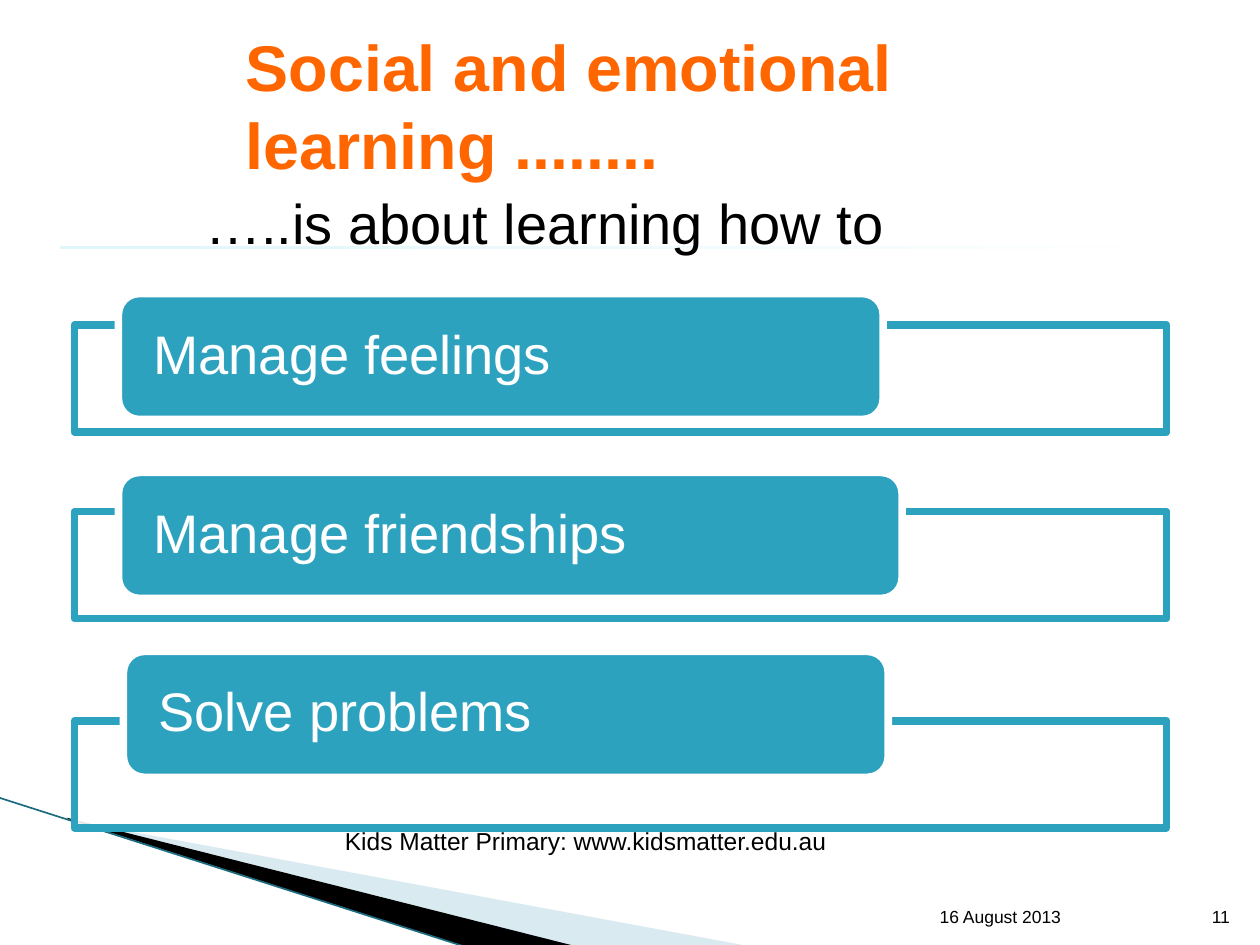
from lxml.etree import SubElement
from pptx import Presentation
from pptx.dml.color import RGBColor
from pptx.enum.shapes import MSO_CONNECTOR, MSO_SHAPE
from pptx.enum.text import MSO_ANCHOR, PP_ALIGN
from pptx.oxml.ns import qn
from pptx.util import Inches, Pt

WHITE = RGBColor(0xFF, 0xFF, 0xFF)
BLACK = RGBColor(0, 0, 0)
ORANGE = RGBColor(0xFF, 0x66, 0x00)
TEAL = RGBColor(0x2D, 0xA2, 0xBF)
MIST = RGBColor(0xA0, 0xCB, 0xDC)
EDGE = RGBColor(0x1B, 0x6C, 0x80)
PALE = RGBColor(0xDE, 0xF5, 0xFA)

COLS, ROWS = 100, 75
FONT = "Arial"
BORDER = 4.33


class SlideBuilder:
    def __init__(self, prs):
        self.s = prs.slides.add_slide(prs.slide_layouts[5])
        self.col = prs.slide_width / COLS
        self.row = prs.slide_height / ROWS

    def grid(self, x, y):
        return round(x * self.col), round(y * self.row)

    def box(self, x, y, w, h):
        return *self.grid(x, y), *self.grid(w, h)

    def paint(self, sp, fill, line=None, alpha=None):
        sp.shadow.inherit = False
        sp.fill.solid()
        sp.fill.fore_color.rgb = fill
        if alpha:
            clr = sp._element.spPr.find(qn("a:solidFill"))[0]
            SubElement(clr, qn("a:alpha"), val=str(alpha * 1000))
        if line is None:
            sp.line.fill.background()
        else:
            sp.line.color.rgb = line
            sp.line.width = Pt(BORDER)

    def set_text(self, sp, text, size, color, align=PP_ALIGN.LEFT,
                 anchor=MSO_ANCHOR.TOP, spacing=None, bold=False):
        tf = sp.text_frame
        tf.word_wrap = True
        tf.vertical_anchor = anchor
        p = tf.paragraphs[0]
        p.text = text
        p.alignment = align
        p.line_spacing = spacing
        p.font.name, p.font.size, p.font.bold = FONT, Pt(size), bold
        p.font.color.rgb = color

    def title(self, area, text):
        sp = self.s.shapes.title
        sp.left, sp.top, sp.width, sp.height = self.box(*area)
        self.set_text(sp, text, 36.9, ORANGE, anchor=MSO_ANCHOR.MIDDLE, bold=True)

    def text(self, area, text, size, **style):
        sp = self.s.shapes.add_textbox(*self.box(*area))
        self.set_text(sp, text, size, BLACK, **style)

    def shape(self, kind, area, fill, line=None, alpha=None):
        sp = self.s.shapes.add_shape(kind, *self.box(*area))
        self.paint(sp, fill, line, alpha)
        return sp

    def wedge(self, points, fill, alpha=None):
        start, *rest = [self.grid(x, y) for x, y in points]
        fb = self.s.shapes.build_freeform(*start, scale=1.0)
        fb.add_line_segments(rest, close=True)
        self.paint(fb.convert_to_shape(), fill, alpha=alpha)

    def line(self, start, end, color, width):
        cx = self.s.shapes.add_connector(
            MSO_CONNECTOR.STRAIGHT, *self.grid(*start), *self.grid(*end))
        cx.line.color.rgb = color
        cx.line.width = Pt(width)
        SubElement(cx._element.spPr, qn("a:effectLst"))

    def fading_rule(self, area):
        sp = self.shape(MSO_SHAPE.RECTANGLE, area, PALE)
        sp.fill.gradient()
        sp.fill.gradient_angle = 0
        for stop, color in zip(sp.fill.gradient_stops, (PALE, WHITE)):
            stop.color.rgb = color

    def skill(self, frame_top, pill, text):
        self.shape(MSO_SHAPE.RECTANGLE, (5.9, frame_top, 86.7, 8.5),
                   WHITE, TEAL, alpha=90)
        sp = self.shape(MSO_SHAPE.ROUNDED_RECTANGLE, pill, TEAL, WHITE)
        tf = sp.text_frame
        tf.margin_left = tf.margin_right = round(2.3 * self.col)
        tf.margin_top = tf.margin_bottom = 0
        self.set_text(sp, text, 31, WHITE, anchor=MSO_ANCHOR.MIDDLE, spacing=0.9)


def main():
    prs = Presentation()
    prs.slide_width, prs.slide_height = Inches(10), Inches(7.5)
    b = SlideBuilder(prs)

    b.wedge([(5.5, 65.1), (59.5, 75.1), (45.6, 75.1), (5.5, 65)], MIST, alpha=40)
    b.wedge([(5.3, 64.9), (45.7, 75.1), (37.2, 75.2), (5.4, 65)], BLACK)
    b.line((-0.1, 63.3), (37.1, 75.2), EDGE, 0.95)
    b.fading_rule((4.8, 19.5, 90, 0.3))

    b.title((18.5, 2.1, 73.7, 12.4), "Social and emotional learning ........")
    skills = [
        ("Manage feelings", 25.8, 9.4, 60.7),
        ("Manage friendships", 40.6, 9.4, 62.2),
        ("Solve problems", 57.2, 9.8, 60.7),
    ]
    for i, (text, frame_top, left, width) in enumerate(skills):
        b.skill(frame_top, (left, 23.3 + 14.2 * i, width, 10), text)

    b.text((73.6, 70.1, 21, 4), "16 August 2013", 10, anchor=MSO_ANCHOR.BOTTOM)
    b.text((94.6, 70.1, 4, 4), "11", 10, align=PP_ALIGN.RIGHT,
           anchor=MSO_ANCHOR.BOTTOM)
    b.text((9, 15.5, 68.5, 5.3), "…..is about learning how to", 32,
           align=PP_ALIGN.CENTER, spacing=0.8)
    b.text((13.8, 65.1, 65.4, 3.4), "Kids Matter Primary: www.kidsmatter.edu.au",
           14, align=PP_ALIGN.CENTER)
    prs.save("out.pptx")


if __name__ == "__main__":
    main()
